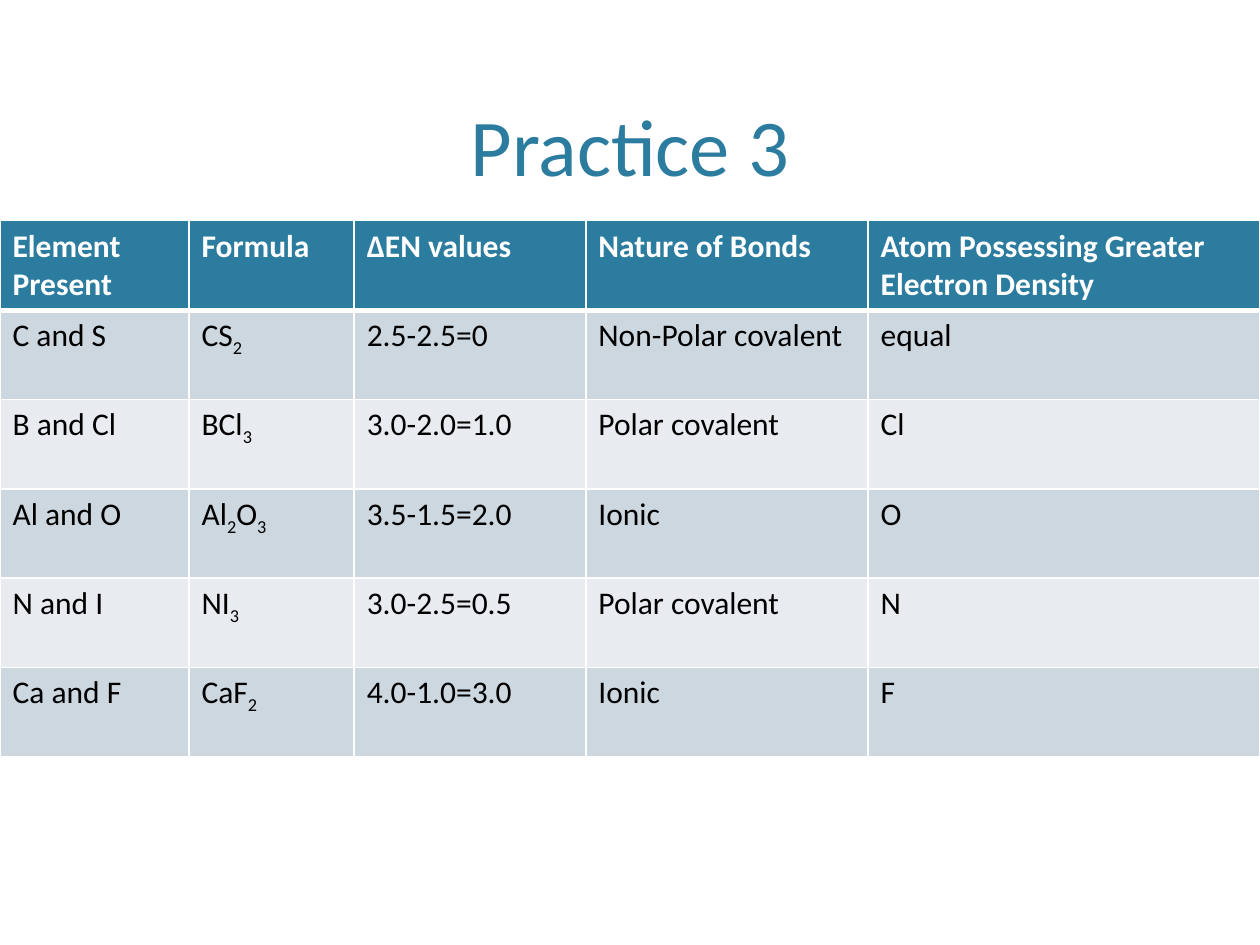
from itertools import groupby

from lxml import etree
from pptx import Presentation
from pptx.dml.color import RGBColor
from pptx.enum.text import MSO_ANCHOR, MSO_AUTO_SIZE, PP_ALIGN
from pptx.oxml.ns import qn
from pptx.util import Cm, Pt

BOTTOM = MSO_ANCHOR.BOTTOM
NO_AUTOFIT = MSO_AUTO_SIZE.NONE
CENTER = PP_ALIGN.CENTER

TEAL = RGBColor(0x2C, 0x7C, 0x9F)
DARK_BAND = RGBColor(0xCD, 0xD7, 0xDF)
LIGHT_BAND = RGBColor(0xE8, 0xEC, 0xF0)
WHITE = RGBColor(0xFF, 0xFF, 0xFF)
BLACK = RGBColor(0x00, 0x00, 0x00)

TITLE_ONLY = 5
FORMULA_COLUMN = 1
COLUMN_WIDTHS = [3.81, 3.33, 4.67, 5.69, 7.9]
ROW_HEIGHT = 1.8
ROWS = [
    ["Element Present", "Formula", "ΔEN values", "Nature of Bonds",
     "Atom Possessing Greater Electron Density"],
    ["C and S", "CS2", "2.5-2.5=0", "Non-Polar covalent", "equal"],
    ["B and Cl", "BCl3", "3.0-2.0=1.0", "Polar covalent", "Cl"],
    ["Al and O", "Al2O3", "3.5-1.5=2.0", "Ionic", "O"],
    ["N and I", "NI3", "3.0-2.5=0.5", "Polar covalent", "N"],
    ["Ca and F", "CaF2", "4.0-1.0=3.0", "Ionic", "F"],
]


class SlideBuilder:
    def __init__(self, slide, font="Calibri"):
        self.slide = slide
        self.font = font

    def format_span(self, span, size, color, bold=False):
        span.font.name = self.font
        span.font.size = Pt(size)
        span.font.color.rgb = color
        span.font.bold = bold

    def title(self, text, left, top, width, height):
        box = self.slide.shapes.title
        box.left, box.top, box.width, box.height = map(Cm, (left, top, width, height))
        frame = box.text_frame
        frame.text = text
        frame.vertical_anchor = BOTTOM
        frame.auto_size = NO_AUTOFIT
        para = frame.paragraphs[0]
        para.alignment = CENTER
        self.format_span(para.runs[0], 46, TEAL)

    def table(self, rows, left, top, widths, row_height):
        frame = self.slide.shapes.add_table(
            len(rows), len(widths), Cm(left), Cm(top),
            Cm(sum(widths)), Cm(row_height * len(rows)))
        table = frame.table
        for column, width in zip(table.columns, widths):
            column.width = Cm(width)
        for row_index, texts in enumerate(rows):
            table.rows[row_index].height = Cm(row_height)
            for column_index, text in enumerate(texts):
                self.cell(table.cell(row_index, column_index), text, row_index,
                          column_index == FORMULA_COLUMN)

    def cell(self, cell, text, row_index, is_formula):
        header = row_index == 0
        self.borders(cell, top=3 if row_index == 1 else 1, bottom=3 if header else 1)
        cell.fill.solid()
        band = DARK_BAND if row_index % 2 else LIGHT_BAND
        cell.fill.fore_color.rgb = TEAL if header else band
        para = cell.text_frame.paragraphs[0]
        # In a formula every digit is a subscript.
        for subscript, letters in groupby(text, lambda sign: is_formula and sign.isdigit()):
            span = para.add_run()
            span.text = "".join(letters)
            self.format_span(span, 18, WHITE if header else BLACK, header)
            if subscript:
                span.font._element.set("baseline", "-25000")

    def borders(self, cell, top, bottom):
        """Draw white cell borders, with top and bottom widths in points."""
        properties = cell._tc.get_or_add_tcPr()
        for side, width in (("L", 1), ("R", 1), ("T", top), ("B", bottom)):
            line = etree.SubElement(properties, qn(f"a:ln{side}"), w=str(Pt(width)))
            fill = etree.SubElement(line, qn("a:solidFill"))
            etree.SubElement(fill, qn("a:srgbClr"), val=str(WHITE))


def main():
    deck = Presentation()
    deck.slide_width, deck.slide_height = Cm(25.4), Cm(19.05)
    page = SlideBuilder(deck.slides.add_slide(deck.slide_layouts[TITLE_ONLY]))
    page.title("Practice 3", 1.52, 0.3, 22.35, 3.71)
    page.table(ROWS, 0, 4.45, COLUMN_WIDTHS, ROW_HEIGHT)
    deck.save("out.pptx")


if __name__ == "__main__":
    main()
